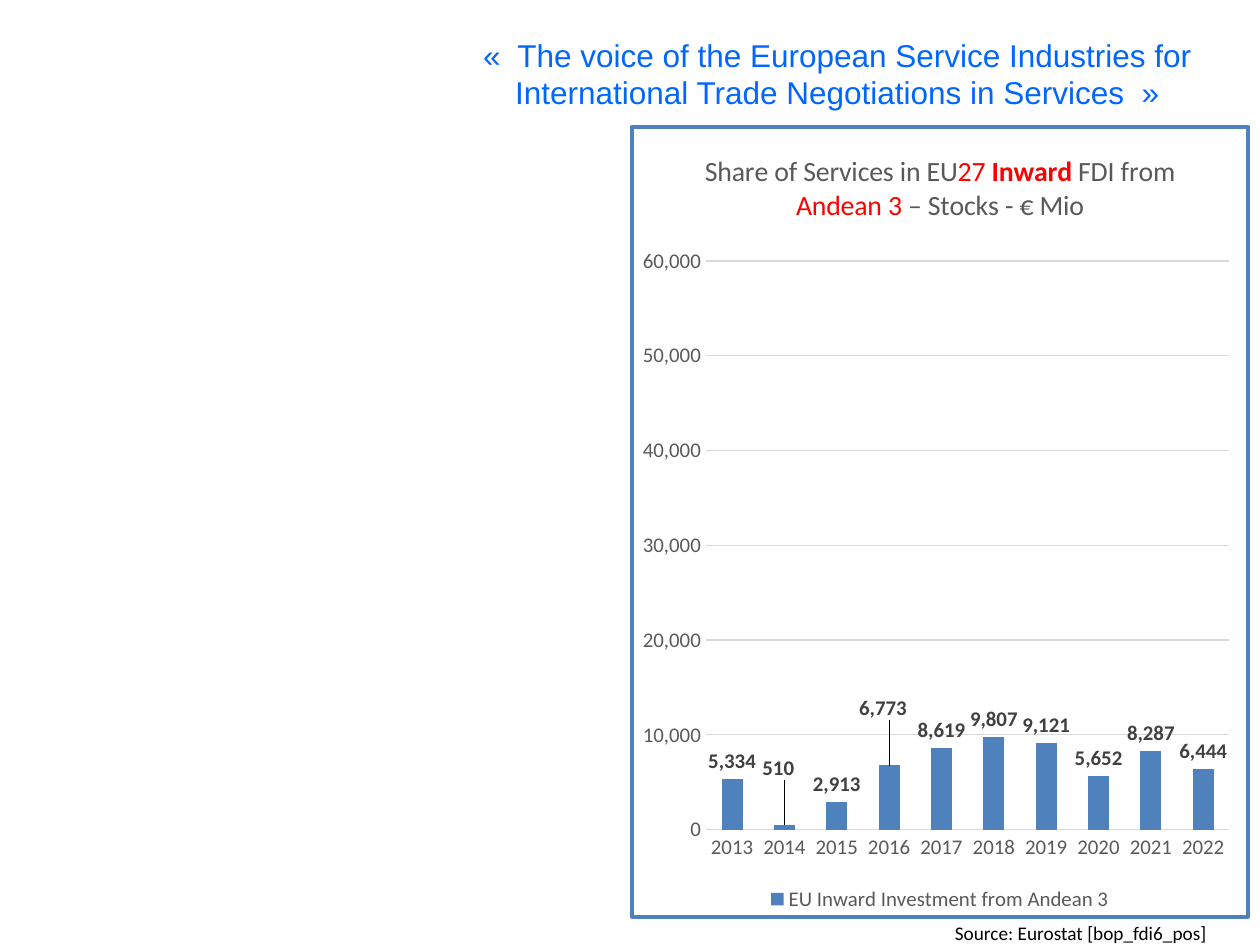
from dataclasses import dataclass

from lxml import etree
from pptx import Presentation
from pptx.chart.data import CategoryChartData
from pptx.dml.color import RGBColor
from pptx.enum.chart import XL_CHART_TYPE, XL_LABEL_POSITION, XL_LEGEND_POSITION, XL_TICK_MARK
from pptx.enum.text import MSO_ANCHOR, MSO_AUTO_SIZE, PP_ALIGN
from pptx.oxml import parse_xml
from pptx.oxml.ns import nsdecls, qn
from pptx.util import Inches, Pt

COLUMNS = XL_CHART_TYPE.COLUMN_CLUSTERED
OUTSIDE_END = XL_LABEL_POSITION.OUTSIDE_END
BOTTOM = XL_LEGEND_POSITION.BOTTOM
NO_TICK = XL_TICK_MARK.NONE
TOP, CENTER = MSO_ANCHOR.TOP, PP_ALIGN.CENTER
NO_AUTOFIT = MSO_AUTO_SIZE.NONE

WIDTH, HEIGHT = Inches(10), Inches(7.5)
BLUE, GRAY, GRID, RED = "4F81BD", "595959", "D9D9D9", "FF0000"
NUMBER_FORMAT = "#,##0"

TAGLINE = ("«  The voice of the European Service Industries for "
           "International Trade Negotiations in Services  »")
SOURCE = "Source: Eurostat [bop_fdi6_pos]"
STOCKS = {2013: 5334, 2014: 510, 2015: 2913, 2016: 6773, 2017: 8619,
          2018: 9807, 2019: 9121, 2020: 5652, 2021: 8287, 2022: 6444}


@dataclass
class Area:
    """A rectangle in shares of its container's size."""
    x: float
    y: float
    w: float
    h: float

    def on_slide(self) -> tuple[int, int, int, int]:
        return (int(self.x * WIDTH), int(self.y * HEIGHT),
                int(self.w * WIDTH), int(self.h * HEIGHT))


@dataclass
class TitleRun:
    text: str
    color: str = GRAY
    bold: bool = False


@dataclass
class LabelShift:
    """Offset of one data label, in shares of the chart's size."""
    year: int
    x: float
    y: float


TAGLINE_AREA = Area(0.352, 0.031, 0.625, 0.095)
CHART_AREA = Area(0.5, 0.132, 0.492, 0.84)
SOURCE_AREA = Area(0.748, 0.968, 0.244, 0.032)
PLOT_AREA = Area(0.12, 0.17, 0.85, 0.72)

CHART_TITLE = [TitleRun("Share of Services in EU"), TitleRun("27 ", RED),
               TitleRun("Inward", RED, True), TitleRun(" FDI from "),
               TitleRun("Andean 3", RED), TitleRun(" – Stocks - € Mio")]
LABEL_SHIFTS = [LabelShift(2014, -0.01, -0.05), LabelShift(2016, -0.01, -0.05)]


def rgb(color: str) -> RGBColor:
    return RGBColor.from_string(color)


def format_font(font, size: float, color: str, name: str = "Calibri", bold: bool = False) -> None:
    for attribute, value in {"size": Pt(size), "name": name, "bold": bold}.items():
        setattr(font, attribute, value)
    font.color.rgb = rgb(color)


def format_line(line, color: str, width: float) -> None:
    line.color.rgb = rgb(color)
    line.width = Pt(width)


def write_text(shape, text: str, size: float, color: str, font: str, align=None) -> None:
    frame = shape.text_frame
    settings = {"word_wrap": True, "auto_size": NO_AUTOFIT, "vertical_anchor": TOP}
    for attribute, value in settings.items():
        setattr(frame, attribute, value)
    paragraph = frame.paragraphs[0]
    paragraph.alignment = align
    run = paragraph.add_run()
    run.text = text
    format_font(run.font, size, color, font)


def manual_layout(values: dict):
    layout = parse_xml(f"<c:layout {nsdecls('c')}><c:manualLayout/></c:layout>")
    for tag, value in values.items():
        etree.SubElement(layout[0], qn(f"c:{tag}")).set("val", str(value))
    return layout


def place_plot(chart, area: Area) -> None:
    plot_area = chart._chartSpace.find(".//" + qn("c:plotArea"))
    for old in plot_area.findall(qn("c:layout")):
        plot_area.remove(old)
    plot_area.insert(0, manual_layout({
        "layoutTarget": "inner", "xMode": "edge", "yMode": "edge",
        "x": area.x, "y": area.y, "w": area.w, "h": area.h}))


def frame_chart(chart, fill: str, border: str, width: float) -> None:
    properties = parse_xml(
        f'<c:spPr {nsdecls("c", "a")}><a:solidFill><a:srgbClr val="{fill}"/></a:solidFill>'
        f'<a:ln w="{Pt(width)}"><a:solidFill><a:srgbClr val="{border}"/></a:solidFill></a:ln></c:spPr>')
    chart._chartSpace.find(qn("c:chart")).addnext(properties)


def format_labels(series) -> None:
    labels = series.data_labels
    settings = {"show_value": True, "position": OUTSIDE_END,
                "number_format": NUMBER_FORMAT, "number_format_is_linked": False}
    for attribute, value in settings.items():
        setattr(labels, attribute, value)
    format_font(labels.font, 12, "404040", bold=True)
    years = list(STOCKS)
    for shift in LABEL_SHIFTS:
        label = series.points[years.index(shift.year)].data_label
        label.position = OUTSIDE_END
        format_font(label.font, 12, "404040", bold=True)
    for element, shift in zip(series._element.iter(qn("c:dLbl")), LABEL_SHIFTS):
        element.find(qn("c:idx")).addnext(manual_layout({"x": shift.x, "y": shift.y}))


def add_stock_chart(slide) -> None:
    data = CategoryChartData(number_format=NUMBER_FORMAT)
    data.categories = [str(year) for year in STOCKS]
    data.add_series("EU Inward Investment from Andean 3", STOCKS.values())
    chart = slide.shapes.add_chart(COLUMNS, *CHART_AREA.on_slide(), data).chart
    format_font(chart.font, 10, "000000")
    frame_chart(chart, "FFFFFF", BLUE, 2.25)
    place_plot(chart, PLOT_AREA)

    # Chart title
    heading = chart.chart_title.text_frame.paragraphs[0]
    for part in CHART_TITLE:
        run = heading.add_run()
        run.text = part.text
        format_font(run.font, 16, part.color, bold=part.bold)

    # Legend
    chart.has_legend = True
    chart.legend.position = BOTTOM
    chart.legend.include_in_layout = False
    format_font(chart.legend.font, 12, GRAY)

    # Axes
    years, amounts = chart.category_axis, chart.value_axis
    for axis in (years, amounts):
        axis.major_tick_mark = axis.minor_tick_mark = NO_TICK
        format_font(axis.tick_labels.font, 12, GRAY)
    format_line(years.format.line, GRID, 0.75)
    amounts.format.line.fill.background()
    scale = {"minimum_scale": 0, "maximum_scale": 60000, "major_unit": 10000}
    for attribute, value in scale.items():
        setattr(amounts, attribute, value)
    amounts.tick_labels.number_format = NUMBER_FORMAT
    amounts.tick_labels.number_format_is_linked = False
    format_line(amounts.major_gridlines.format.line, GRID, 0.75)

    # Columns
    plot = chart.plots[0]
    plot.gap_width = 150
    plot.vary_by_categories = False
    stocks = plot.series[0]
    stocks.format.fill.solid()
    stocks.format.fill.fore_color.rgb = rgb(BLUE)
    format_labels(stocks)


def main() -> None:
    deck = Presentation()
    deck.slide_width, deck.slide_height = WIDTH, HEIGHT
    slide = deck.slides.add_slide(deck.slide_layouts[5])

    # Tagline
    tagline = slide.shapes.title
    tagline.left, tagline.top, tagline.width, tagline.height = TAGLINE_AREA.on_slide()
    write_text(tagline, TAGLINE, 18, "0066FF", "Arial", CENTER)

    # Chart and its source
    add_stock_chart(slide)
    source = slide.shapes.add_textbox(*SOURCE_AREA.on_slide())
    write_text(source, SOURCE, 11, "000000", "Calibri")

    deck.save("out.pptx")


if __name__ == "__main__":
    main()
